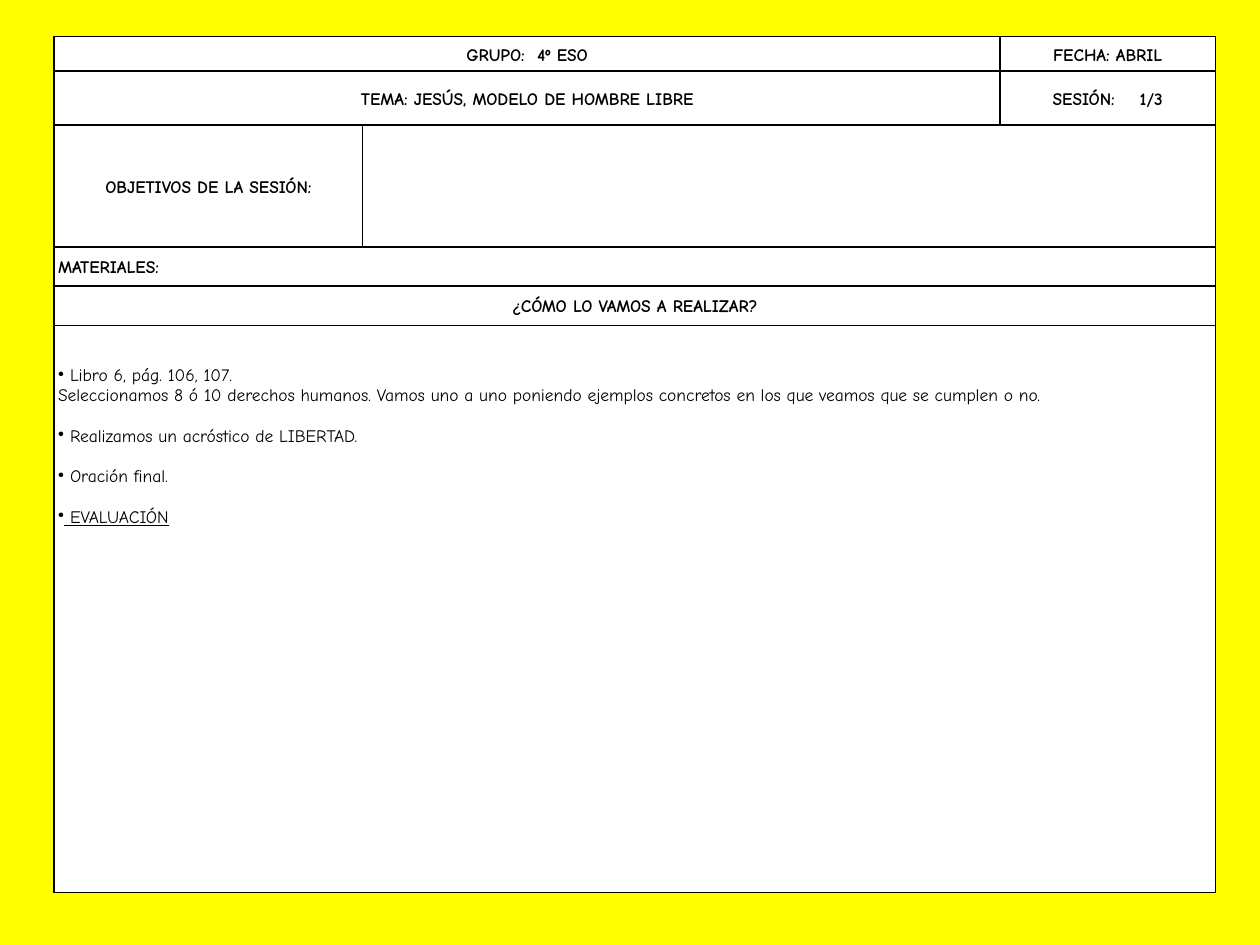
from dataclasses import dataclass

from pptx import Presentation
from pptx.dml.color import RGBColor
from pptx.enum.text import MSO_ANCHOR, PP_ALIGN
from pptx.oxml.ns import qn
from pptx.util import Cm, Pt
from lxml.etree import SubElement


@dataclass(frozen=True)
class Theme:
    background: RGBColor = RGBColor(0xFF, 0xFF, 0x00)
    paper: RGBColor = RGBColor(0xFF, 0xFF, 0xFF)
    ink: RGBColor = RGBColor(0x00, 0x00, 0x00)
    font: str = "Comic Neue"
    size: Pt = Pt(10)
    line: Pt = Pt(1)
    gap: Pt = Pt(11.6)  # one line of text


THEME = Theme()
COLUMNS = [6.22, 12.85, 4.34]
ROWS = [0.69, 1.09, 2.46, 0.79, 0.79, 11.43]
# First and last cell of each merged range, as (row, column)
MERGES = [((0, 0), (0, 1)), ((1, 0), (1, 1)), ((2, 1), (2, 2)),
          ((3, 0), (3, 2)), ((4, 0), (4, 2)), ((5, 0), (5, 2))]
# Row, column, label, value, extra width in points of the space between
HEADINGS = [
    (0, 0, "GRUPO:", "4º ESO", 3.5),
    (0, 2, "FECHA:", "ABRIL", 0),
    (1, 0, "TEMA:", "JESÚS, MODELO DE HOMBRE LIBRE", 0),
    (1, 2, "SESIÓN:", "1/3", 10.7),
    (2, 0, "OBJETIVOS DE LA SESIÓN:", "", 0),
    (3, 0, "MATERIALES:", "", 0),
    (4, 0, "¿CÓMO LO VAMOS A REALIZAR?", "", 0),
]
MATERIALS_ROW = 3
# Text, bulleted, gap above, underlined
ACTIVITIES = [
    (" Libro 6, pág. 106, 107.", True, False, False),
    ("Seleccionamos 8 ó 10 derechos humanos. Vamos uno a uno poniendo ejemplos "
     "concretos en los que veamos que se cumplen o no.", False, False, False),
    (" Realizamos un acróstico de LIBERTAD.", True, True, False),
    (" Oración final.", True, True, False),
    (" EVALUACIÓN", True, True, True),
]


def style_font(font, bold=False, underline=False):
    font.name, font.size = THEME.font, THEME.size
    font.color.rgb = THEME.ink
    font.bold, font.underline = bold, underline


def style_cell(cell):
    cell.margin_left = cell.margin_right = Cm(0.08)
    cell.margin_top = cell.margin_bottom = 0
    cell.vertical_anchor = MSO_ANCHOR.MIDDLE
    cell.text_frame.paragraphs[0].font.size = THEME.size
    properties = cell._tc.get_or_add_tcPr()
    for side in ("lnL", "lnR", "lnT", "lnB"):
        border = SubElement(properties, qn(f"a:{side}"), w=str(THEME.line))
        ink = SubElement(border, qn("a:solidFill"))
        SubElement(ink, qn("a:srgbClr"), val=str(THEME.ink))
    cell.fill.solid()
    cell.fill.fore_color.rgb = THEME.paper


def add_bullet(paragraph):
    properties = paragraph._p.get_or_add_pPr()
    properties.set("marL", "0")
    properties.set("indent", "0")
    SubElement(properties, qn("a:buChar"), char="•")


def write_heading(cell, label, value, extra_space, alignment):
    paragraph = cell.text_frame.paragraphs[0]
    paragraph.alignment = alignment
    paragraph.line_spacing = 1.15
    for text in (label, " ", value) if value else (label,):
        run = paragraph.add_run()
        run.text = text
        style_font(run.font, bold=True)
        if text == " " and extra_space:
            run._r.get_or_add_rPr().set("spc", str(round(extra_space * 100)))


def write_activities(cell):
    cell.vertical_anchor = MSO_ANCHOR.TOP
    cell.margin_top = 2 * THEME.gap
    frame = cell.text_frame
    frame.text = "\n".join(activity[0] for activity in ACTIVITIES)
    for paragraph, (_, bulleted, gap, underlined) in zip(frame.paragraphs, ACTIVITIES):
        paragraph.alignment = PP_ALIGN.LEFT
        paragraph.space_before = THEME.gap if gap else Pt(0)
        if bulleted:
            add_bullet(paragraph)
        style_font(paragraph.runs[0].font, underline=underlined)


def add_plan_table(slide):
    plan = slide.shapes.add_table(
        len(ROWS), len(COLUMNS), Cm(1.09), Cm(0.74), Cm(sum(COLUMNS)), Cm(sum(ROWS))
    ).table
    plan.first_row = plan.horz_banding = False
    for column, width in zip(plan.columns, COLUMNS):
        column.width = Cm(width)
    for row, height in zip(plan.rows, ROWS):
        row.height = Cm(height)
    for cell in plan.iter_cells():
        style_cell(cell)
    for first, last in MERGES:
        plan.cell(*first).merge(plan.cell(*last))
    return plan


def main():
    presentation = Presentation()
    presentation.slide_width, presentation.slide_height = Cm(25.4), Cm(19.05)
    slide = presentation.slides.add_slide(presentation.slide_layouts[6])
    slide.background.fill.solid()
    slide.background.fill.fore_color.rgb = THEME.background

    # Session plan: headings, then the activities
    plan = add_plan_table(slide)
    for row, column, label, value, extra_space in HEADINGS:
        alignment = PP_ALIGN.LEFT if row == MATERIALS_ROW else PP_ALIGN.CENTER
        write_heading(plan.cell(row, column), label, value, extra_space, alignment)
    write_activities(plan.cell(len(ROWS) - 1, 0))

    presentation.save("out.pptx")


if __name__ == "__main__":
    main()
